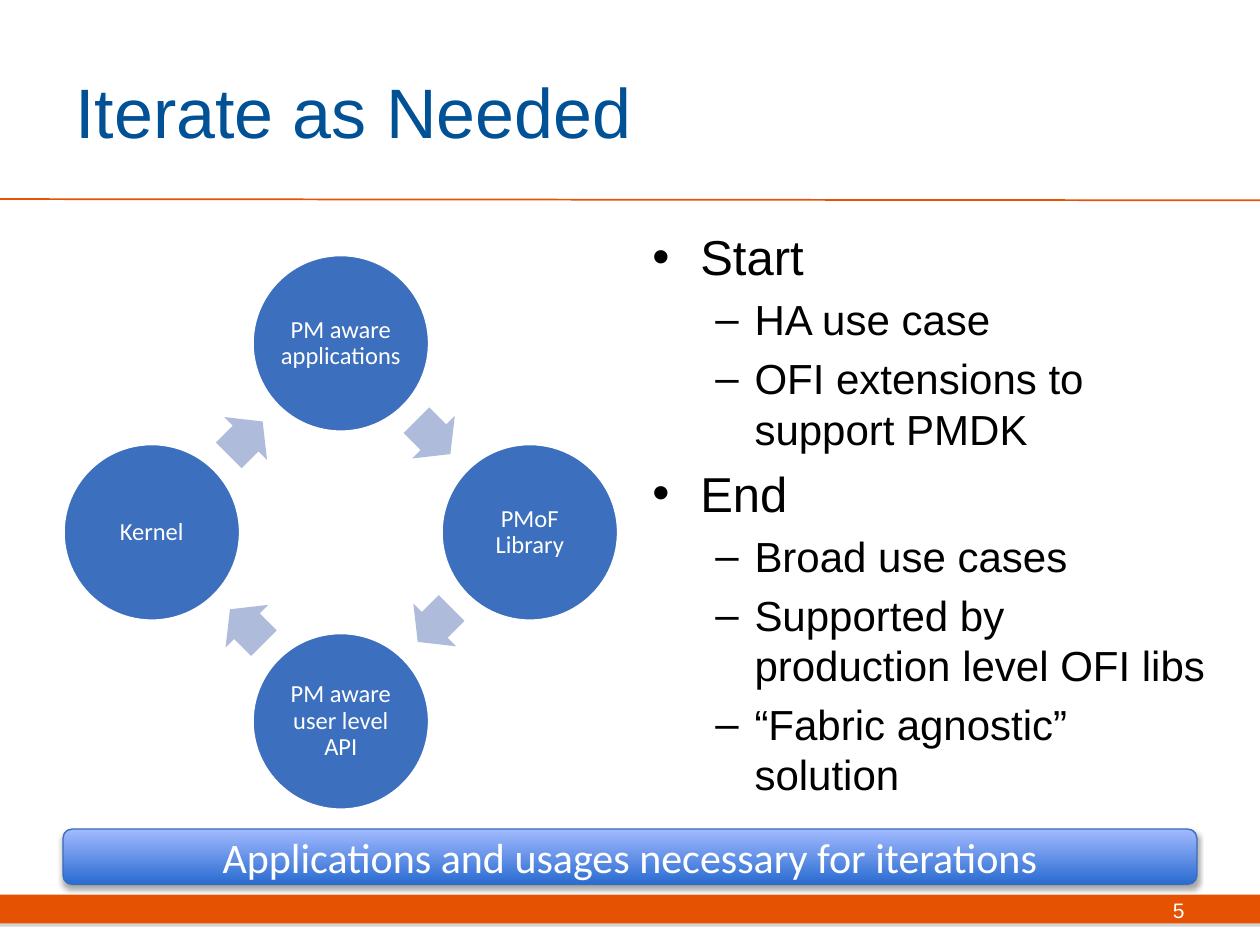
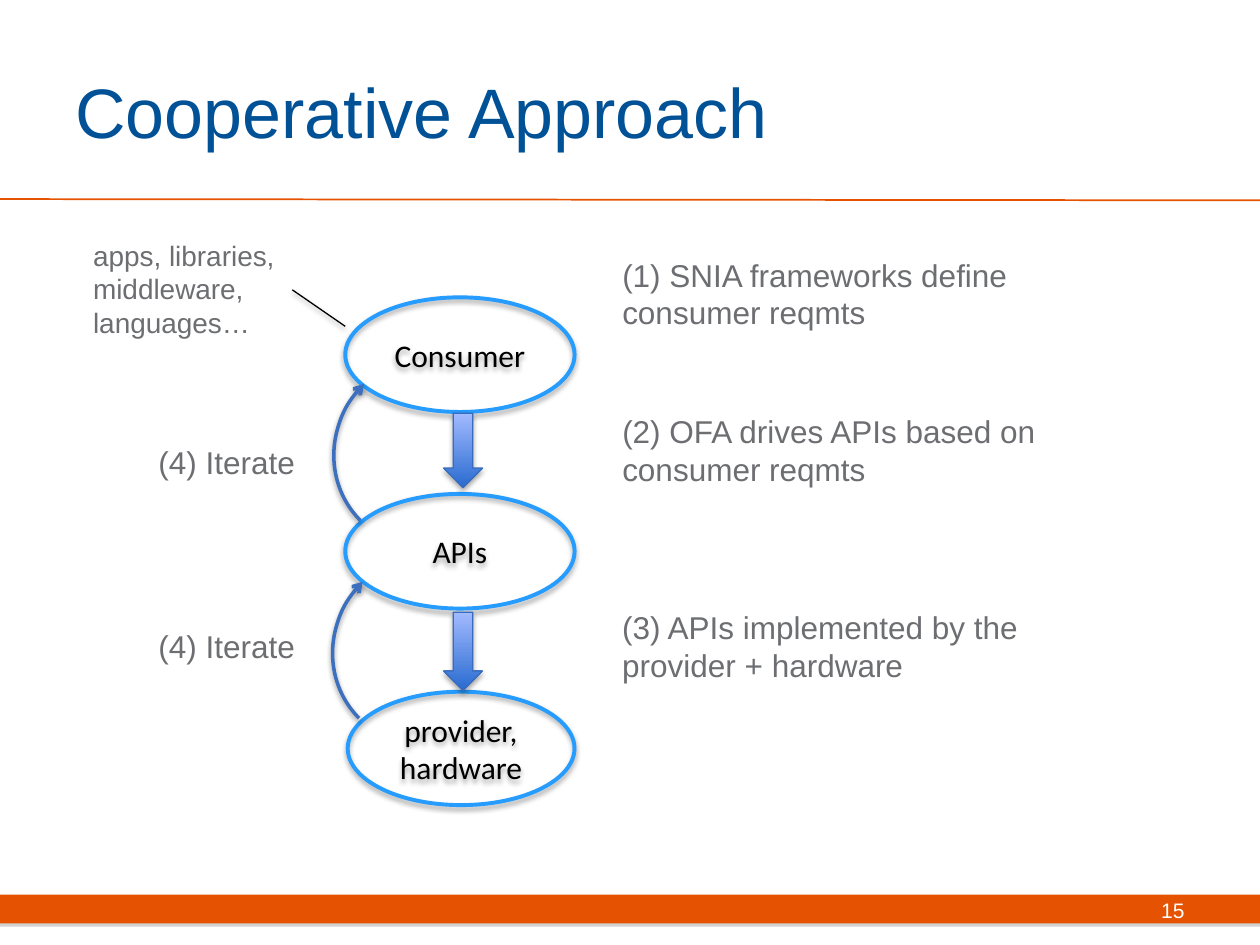
from dataclasses import dataclass

from lxml import etree
from pptx import Presentation
from pptx.dml.color import RGBColor
from pptx.enum.shapes import MSO_CONNECTOR, MSO_SHAPE
from pptx.enum.text import MSO_ANCHOR, PP_ALIGN
from pptx.oxml.ns import qn
from pptx.shapes.autoshape import Shape
from pptx.shapes.base import BaseShape
from pptx.shapes.connector import Connector
from pptx.slide import Slide
from pptx.util import Pt

PX = 9144
LEFT, CENTER, RIGHT = PP_ALIGN.LEFT, PP_ALIGN.CENTER, PP_ALIGN.RIGHT
TOP, MIDDLE = MSO_ANCHOR.TOP, MSO_ANCHOR.MIDDLE
STRAIGHT = MSO_CONNECTOR.STRAIGHT
RECT, ROUNDED, OVAL = MSO_SHAPE.RECTANGLE, MSO_SHAPE.ROUNDED_RECTANGLE, MSO_SHAPE.OVAL
RIGHT_ARROW, DOWN_ARROW, ARC = MSO_SHAPE.RIGHT_ARROW, MSO_SHAPE.DOWN_ARROW, MSO_SHAPE.ARC

COLORS = {
    "orange": "E55302", "title": "005195", "black": "000000", "white": "FFFFFF",
    "grey": "6D6E71", "band_shadow": "808080", "blue": "3C6FBD", "pale": "AFBBDB",
    "outline": "269CFF", "edge": "386CBC", "deep": "296BD0", "light": "A2BAFF",
}


@dataclass(frozen=True)
class Box:
    """A rectangle in px."""
    left: int
    top: int
    width: int
    height: int


@dataclass(frozen=True)
class Style:
    """The look of a text."""
    size: int
    color: str
    font: str = "Arial"
    align: PP_ALIGN = LEFT
    anchor: MSO_ANCHOR = TOP


@dataclass(frozen=True)
class Shadow:
    """A shadow that falls straight down, with blur and distance in points."""
    color: str = "black"
    alpha: int = 35
    blur: float = 3.1
    distance: float = 1.8


@dataclass(frozen=True)
class Label:
    """A text and its place."""
    text: str
    box: Box


@dataclass(frozen=True)
class Bullet:
    """A list entry and its level."""
    text: str
    level: int = 1


@dataclass(frozen=True)
class BulletLevel:
    """The mark, size and indents of a list level."""
    mark: str
    size: int
    margin: int
    hanging: int


TITLE = Style(40, "title", anchor=MIDDLE)
PAGE_NUMBER = Style(12, "white", align=RIGHT, anchor=MIDDLE)
STAGE = Style(14, "white", "Calibri", CENTER, MIDDLE)
BANNER = Style(24, "white", "Calibri", CENTER, MIDDLE)
LAYER = Style(18, "black", "Calibri", CENTER, MIDDLE)
NOTE, STEP = Style(16, "grey"), Style(18, "grey")
SOFT, LINE_SHADOW = Shadow(), Shadow(alpha=38, distance=1.6)
LEVELS = [BulletLevel("•", 28, 38, 38), BulletLevel("–", 24, 81, 31)]

CYCLE = ["PM aware applications", "PMoF Library", "PM aware user level API", "Kernel"]
CYCLE_CENTER, CYCLE_RADIUS, STAGE_SIZE = (270, 422), 150, 141
GOALS = [
    Bullet("Start", 0), Bullet("HA use case"), Bullet("OFI extensions to support PMDK"),
    Bullet("End", 0), Bullet("Broad use cases"),
    Bullet("Supported by production level OFI libs"), Bullet("“Fabric agnostic” solution"),
]
LAYERS = [
    Label("Consumer", Box(274, 236, 182, 91)),
    Label("APIs", Box(274, 392, 182, 91)),
    Label("provider,\nhardware", Box(276, 549, 180, 90)),
]
DOWN_STEPS = [Box(352, 328, 31, 59), Box(352, 486, 31, 62)]
LOOPS = [Box(263, 283, 157, 149), Box(262, 440, 157, 149)]
STEPS = [
    Label("(1) SNIA frameworks define consumer reqmts", Box(484, 198, 381, 71)),
    Label("(2) OFA drives APIs based on consumer reqmts", Box(484, 322, 381, 71)),
    Label("(3) APIs implemented by the provider + hardware", Box(484, 478, 373, 71)),
    Label("(4) Iterate", Box(116, 347, 247, 40)),
    Label("(4) Iterate", Box(116, 493, 247, 40)),
]


def rgb(name: str) -> RGBColor:
    """Look up a colour."""
    return RGBColor.from_string(COLORS[name])


def emu(box: Box) -> tuple[int, int, int, int]:
    """Turn a box into EMU."""
    return box.left * PX, box.top * PX, box.width * PX, box.height * PX


def cast(shape: BaseShape, shadow: Shadow | None) -> None:
    """Replace the theme shadow of a shape or connector."""
    properties = shape._element.spPr
    effects = properties.find(qn("a:effectLst"))
    if effects is None:
        effects = etree.SubElement(properties, qn("a:effectLst"))
    if shadow:
        outer = etree.SubElement(
            effects, qn("a:outerShdw"), blurRad=str(Pt(shadow.blur)),
            dist=str(Pt(shadow.distance)), dir="5400000", rotWithShape="0")
        tone = etree.SubElement(outer, qn("a:srgbClr"), val=COLORS[shadow.color])
        etree.SubElement(tone, qn("a:alpha"), val=str(shadow.alpha * 1000))


def write(shape: Shape, text: str, style: Style) -> None:
    """Fill a shape with styled text."""
    frame = shape.text_frame
    frame.text = text
    frame.word_wrap = True
    frame.vertical_anchor = style.anchor
    for paragraph in frame.paragraphs:
        paragraph.alignment = style.align
        for run in paragraph.runs:
            run.font.size = Pt(style.size)
            run.font.name = style.font
            run.font.color.rgb = rgb(style.color)


def add_label(slide: Slide, label: Label, style: Style) -> None:
    """Add a text box."""
    write(slide.shapes.add_textbox(*emu(label.box)), label.text, style)


def add_figure(slide: Slide, kind: MSO_SHAPE, box: Box, fill: str | None = None,
               line: str | None = None, weight: float = 1,
               shadow: Shadow | None = None) -> Shape:
    """Add a preset shape with its fill, line and shadow."""
    figure = slide.shapes.add_shape(kind, *emu(box))
    figure.shadow.inherit = False
    if fill:
        figure.fill.solid()
        figure.fill.fore_color.rgb = rgb(fill)
    else:
        figure.fill.background()
    if line:
        figure.line.color.rgb = rgb(line)
        figure.line.width = Pt(weight)
    else:
        figure.line.fill.background()
    cast(figure, shadow)
    return figure


def add_glossy(slide: Slide, kind: MSO_SHAPE, box: Box) -> Shape:
    """Add a shape with the blue vertical gradient."""
    figure = add_figure(slide, kind, box, line="edge", weight=0.75, shadow=SOFT)
    figure.fill.gradient()
    figure.fill.gradient_angle = 90
    for stop, color, position in zip(figure.fill.gradient_stops, ("deep", "light"), (0, 1)):
        stop.color.rgb = rgb(color)
        stop.position = position
    return figure


def add_line(slide: Slide, start: tuple[int, int], end: tuple[int, int], color: str,
             weight: float, shadow: Shadow | None = None) -> Connector:
    """Add a straight line."""
    line = slide.shapes.add_connector(STRAIGHT, *(value * PX for value in start + end))
    line.line.color.rgb = rgb(color)
    line.line.width = Pt(weight)
    cast(line, shadow)
    return line


def add_bullets(slide: Slide, box: Box, bullets: list[Bullet]) -> None:
    """Add a two-level bullet list."""
    body = slide.shapes.add_textbox(*emu(box))
    write(body, "\n".join(bullet.text for bullet in bullets), Style(24, "black"))
    for index, (paragraph, bullet) in enumerate(zip(body.text_frame.paragraphs, bullets)):
        level = LEVELS[bullet.level]
        paragraph.level = bullet.level
        properties = paragraph._p.get_or_add_pPr()
        properties.set("marL", str(level.margin * PX))
        properties.set("indent", str(-level.hanging * PX))
        etree.SubElement(properties, qn("a:buFont"), typeface="Arial")
        etree.SubElement(properties, qn("a:buChar"), char=level.mark)
        if index:
            paragraph.space_before = Pt(level.size * 0.2)
        for run in paragraph.runs:
            run.font.size = Pt(level.size)


def add_page(deck: Presentation, title: str, number: int) -> Slide:
    """Add a slide with the shared title, rule and footer band."""
    slide = deck.slides.add_slide(deck.slide_layouts[6])
    add_figure(slide, RECT, Box(0, 710, 1000, 23), "orange",
               shadow=Shadow("band_shadow", blur=0))
    add_line(slide, (0, 158), (1000, 159), "orange", 1)
    add_label(slide, Label(title, Box(50, 25, 817, 125)), TITLE)
    add_label(slide, Label(str(number), Box(717, 702, 233, 40)), PAGE_NUMBER)
    return slide


def add_cycle(slide: Slide) -> None:
    """Draw the stages clockwise, each followed by an arrow."""
    center_x, center_y = CYCLE_CENTER
    stage_x, stage_y = 0, -CYCLE_RADIUS
    arrow_x, arrow_y = 74, -75
    for turn, name in enumerate(CYCLE):
        half = STAGE_SIZE // 2
        stage = add_figure(
            slide, OVAL, Box(center_x + stage_x - half, center_y + stage_y - half,
                             STAGE_SIZE, STAGE_SIZE), "blue", "white", 2)
        write(stage, name, STAGE)
        frame = stage.text_frame
        frame.margin_left = frame.margin_right = frame.margin_top = frame.margin_bottom = 2 * PX
        frame.paragraphs[0].line_spacing = 0.9
        arrow = add_figure(slide, RIGHT_ARROW, Box(center_x + arrow_x - 19,
                                                   center_y + arrow_y - 24, 38, 48), "pale")
        arrow.adjustments[0], arrow.adjustments[1] = 0.6, 0.5
        arrow.rotation = 45 + 90 * turn
        stage_x, stage_y = -stage_y, stage_x
        arrow_x, arrow_y = -arrow_y, arrow_x


def add_loop(slide: Slide, box: Box) -> None:
    """Draw a curved arrow back to the layer above."""
    loop = add_figure(slide, ARC, box, line="blue", weight=2, shadow=LINE_SHADOW)
    loop.rotation = 315
    loop._element.spPr.find(qn("a:xfrm")).set("flipH", "1")
    outline = loop._element.spPr.find(qn("a:ln"))
    etree.SubElement(outline, qn("a:headEnd"), type="arrow")


def build_iterate(deck: Presentation) -> None:
    """Build the slide on iterating."""
    slide = add_page(deck, "Iterate as Needed", 5)
    add_bullets(slide, Box(508, 175, 462, 495), GOALS)
    add_cycle(slide)
    banner = add_glossy(slide, ROUNDED, Box(50, 658, 900, 44))
    write(banner, "Applications and usages necessary for iterations", BANNER)


def build_cooperative(deck: Presentation) -> None:
    """Build the slide on the cooperative approach."""
    slide = add_page(deck, "Cooperative Approach", 15)
    for layer in LAYERS:
        oval = add_figure(slide, OVAL, layer.box, line="outline", weight=2.25, shadow=SOFT)
        write(oval, layer.text, LAYER)
    for loop in LOOPS:
        add_loop(slide, loop)
    for down_step in DOWN_STEPS:
        add_glossy(slide, DOWN_ARROW, down_step)
    for step in STEPS:
        add_label(slide, step, STEP)
    consumers = Label("apps, libraries, middleware, languages…", Box(64, 184, 168, 91))
    add_label(slide, consumers, NOTE)
    add_line(slide, (232, 230), (274, 259), "black", 0.75, LINE_SHADOW)


def main() -> None:
    """Build and save the deck."""
    deck = Presentation()
    deck.slide_width, deck.slide_height = 1000 * PX, 750 * PX
    build_iterate(deck)
    build_cooperative(deck)
    deck.save("out.pptx")


if __name__ == "__main__":
    main()
